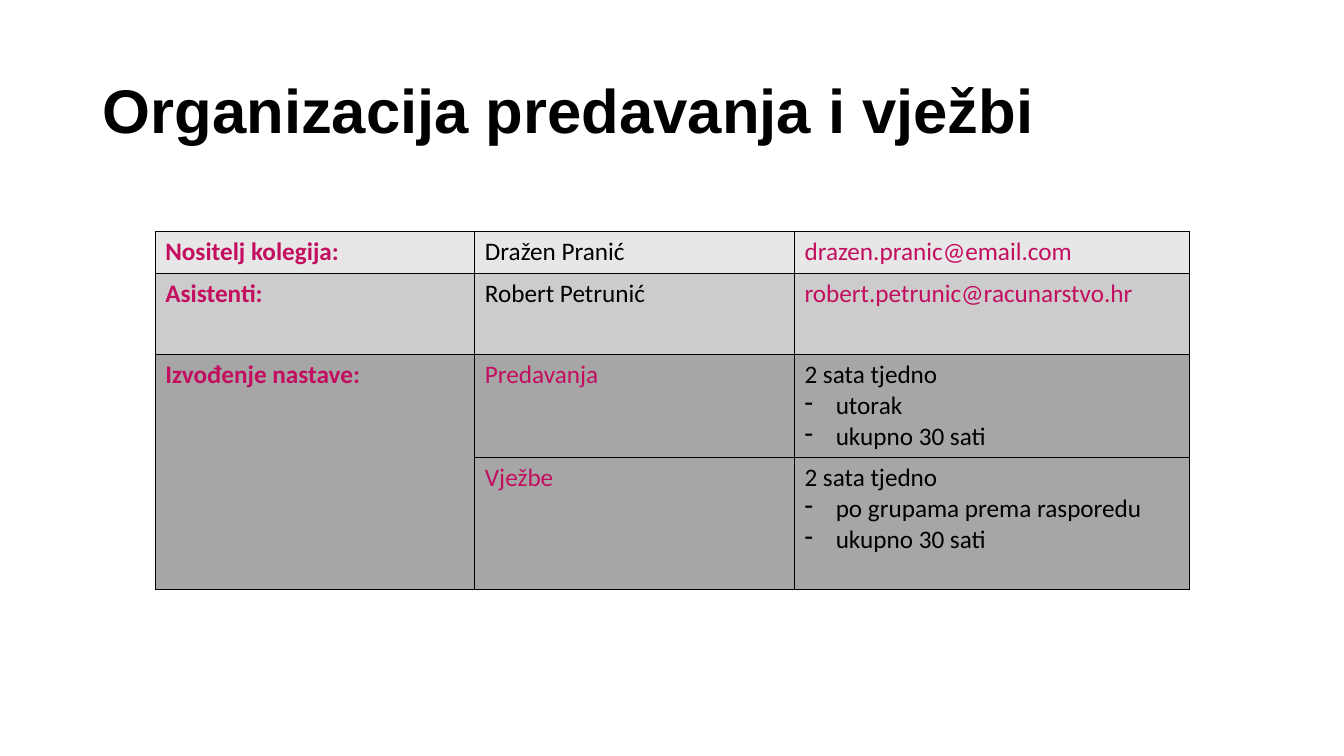
from lxml.etree import SubElement as Sub
from pptx import Presentation
from pptx.dml.color import RGBColor as RGB
from pptx.enum.text import MSO_ANCHOR as Anchor, PP_ALIGN as Align
from pptx.oxml.ns import qn
from pptx.util import Inches, Pt

BLACK = RGB(0, 0, 0)
PINK = RGB(0xC3, 0x0E, 0x60)
PALE = RGB(0xE7, 0xE7, 0xE7)
LIGHT = RGB(0xCC, 0xCC, 0xCC)
GREY = RGB(0xA6, 0xA6, 0xA6)

HEAD = {"name": "Arial", "size": Pt(44), "bold": True}
BODY = {"name": "Calibri", "size": Pt(18), "bold": False}
LABEL = {**BODY, "bold": True}

COLS = [3.17, 3.17, 3.92]
ROWS = [
    (0.41, PALE, "Nositelj kolegija:", "Dražen Pranić", BLACK,
     ["drazen.pranic@email.com"], PINK),
    (0.81, LIGHT, "Asistenti:", "Robert Petrunić", BLACK,
     ["robert.petrunic@racunarstvo.hr"], PINK),
    (1.02, GREY, "Izvođenje nastave:", "Predavanja", PINK,
     ["2 sata tjedno", "utorak", "ukupno 30 sati"], BLACK),
    (1.31, GREY, "", "Vježbe", PINK,
     ["2 sata tjedno", "po grupama prema rasporedu", "ukupno 30 sati"], BLACK),
]


def put(para, text, form, color):
    """Write one formatted run into a paragraph."""
    run = para.add_run()
    run.text = text
    for key, val in form.items():
        setattr(run.font, key, val)
    run.font.color.rgb = color


def dash(para):
    """Give a paragraph a hanging dash."""
    prop = para._p.get_or_add_pPr()
    prop.set("marL", str(Inches(0.31)))
    prop.set("indent", str(-Inches(0.31)))
    Sub(prop, qn("a:buFontTx"))
    Sub(prop, qn("a:buChar"), char="-")


def frame(cell, color):
    """Draw thin lines on all four sides of a cell."""
    prop = cell._tc.get_or_add_tcPr()
    for side in "LRTB":
        line = Sub(prop, qn("a:ln" + side), w=str(Pt(1)))
        Sub(Sub(line, qn("a:solidFill")), qn("a:srgbClr"), val=str(color))


def fill(cell, lines, form, color, back):
    """Frame and shade a cell, and write its lines."""
    frame(cell, BLACK)
    cell.fill.solid()
    cell.fill.fore_color.rgb = back
    text = cell.text_frame
    for i, line in enumerate(lines):
        para = text.add_paragraph() if i else text.paragraphs[0]
        if i:
            dash(para)
        put(para, line, form, color)


def add_title(slide, box, text):
    """Place the slide title in the box."""
    title = slide.shapes.title
    title.left, title.top, title.width, title.height = map(Inches, box)
    title.text_frame.vertical_anchor = Anchor.MIDDLE
    para = title.text_frame.paragraphs[0]
    para.alignment = Align.LEFT
    para.line_spacing = 0.9
    put(para, text, HEAD, BLACK)


def add_grid(slide, box):
    """Place the course table in the box."""
    shape = slide.shapes.add_table(len(ROWS), len(COLS), *map(Inches, box))
    grid = shape.table
    for col, wide in zip(grid.columns, COLS):
        col.width = Inches(wide)
    for i, (high, back, label, name, tint, lines, ink) in enumerate(ROWS):
        grid.rows[i].height = Inches(high)
        fill(grid.cell(i, 0), [label] if label else [], LABEL, PINK, back)
        fill(grid.cell(i, 1), [name], BODY, tint, back)
        fill(grid.cell(i, 2), lines, BODY, ink, back)
    grid.cell(2, 0).merge(grid.cell(3, 0))


def main():
    """Build and save the slide."""
    deck = Presentation()
    deck.slide_width, deck.slide_height = Inches(13.33), Inches(7.5)
    slide = deck.slides.add_slide(deck.slide_layouts[5])
    add_title(slide, (0.92, 0.4, 11.5, 1.45), "Organizacija predavanja i vježbi")
    add_grid(slide, (1.54, 2.3, sum(COLS), sum(row[0] for row in ROWS)))
    deck.save("out.pptx")


if __name__ == "__main__":
    main()
